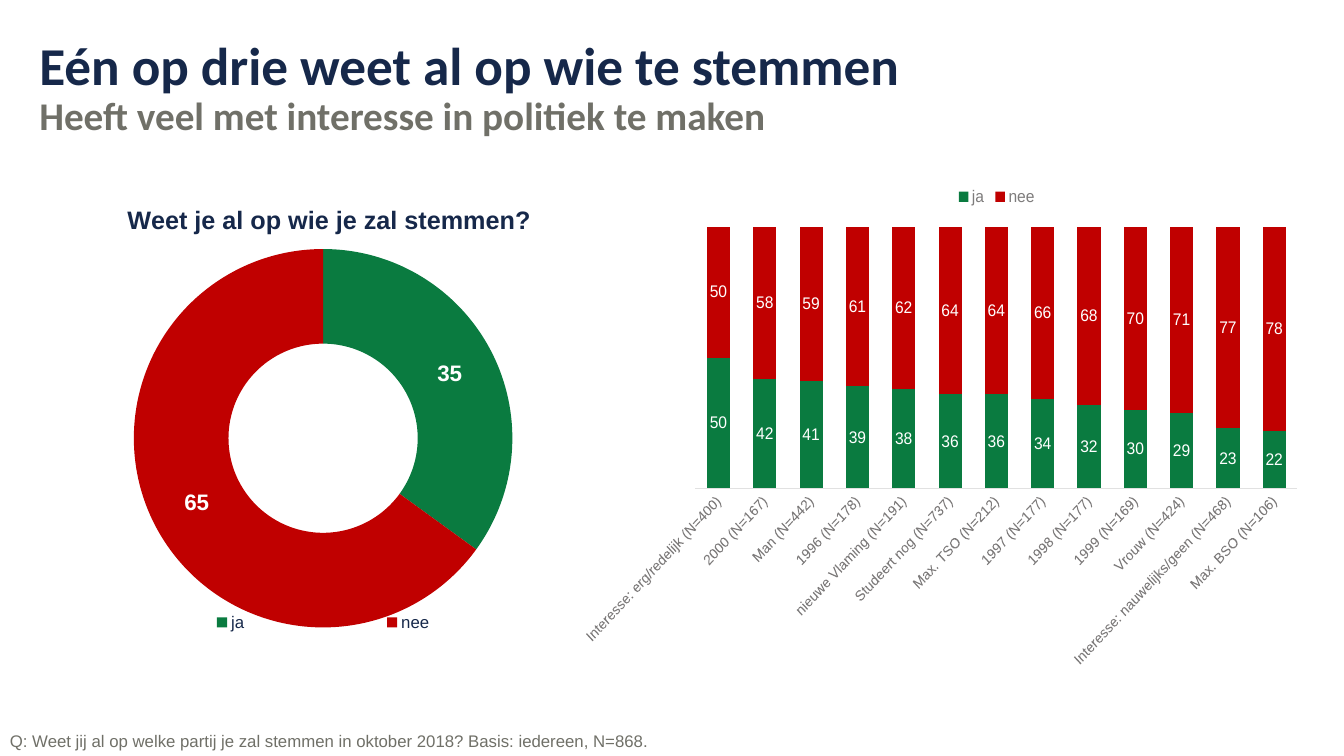
from lxml import etree
from pptx import Presentation
from pptx.chart.data import CategoryChartData
from pptx.dml.color import RGBColor
from pptx.enum.chart import XL_CHART_TYPE as CT, XL_LEGEND_POSITION as LP, XL_TICK_MARK as TM
from pptx.oxml.ns import qn
from pptx.util import Inches, Pt

NAVY = RGBColor(0x16, 0x28, 0x4A)
GREY = RGBColor(0x70, 0x70, 0x68)
MID_GREY = RGBColor(0x7E, 0x7C, 0x7C)
DARK = RGBColor(0x37, 0x36, 0x36)
LINE = RGBColor(0xE1, 0xE1, 0xE1)
WHITE = RGBColor(0xFF, 0xFF, 0xFF)
GREEN = RGBColor(0x0A, 0x7B, 0x40)
RED = RGBColor(0xC0, 0x00, 0x00)

GROUPS = [
    ("Interesse: erg/redelijk (N=400)", 50), ("2000 (N=167)", 42), ("Man (N=442)", 41),
    ("1996 (N=178)", 39), ("nieuwe Vlaming (N=191)", 38), ("Studeert nog (N=737)", 36),
    ("Max. TSO (N=212)", 36), ("1997 (N=177)", 34), ("1998 (N=177)", 32),
    ("1999 (N=169)", 30), ("Vrouw (N=424)", 29),
    ("Interesse: nauwelijks/geen (N=468)", 23), ("Max. BSO (N=106)", 22),
]


def set_font(font, size, color, bold=False, name="Arial"):
    font.name, font.size, font.bold = name, Pt(size), bold
    font.color.rgb = color


def add_run(p, text, **fmt):
    r = p.add_run()
    r.text = text
    set_font(r.font, **fmt)


def add_box(slide, box, inset=None):
    tf = slide.shapes.add_textbox(*map(Inches, box)).text_frame
    tf.word_wrap = True
    if inset is not None:
        tf.margin_left = tf.margin_right = tf.margin_top = tf.margin_bottom = inset
    return tf.paragraphs[0]


def set_layout(parent, index, inner=False, **shares):
    for old in parent.findall(qn("c:layout")):
        parent.remove(old)
    layout = etree.Element(qn("c:layout"))
    manual = etree.SubElement(layout, qn("c:manualLayout"))
    if inner:
        etree.SubElement(manual, qn("c:layoutTarget")).set("val", "inner")
    for key in ("x", "y"):
        etree.SubElement(manual, qn(f"c:{key}Mode")).set("val", "edge")
    for key, share in shares.items():
        etree.SubElement(manual, qn(f"c:{key}")).set("val", str(share))
    parent.insert(index, layout)


def add_chart(slide, box, kind, cats, series, plot, legend, legend_pos, legend_color, label):
    data = CategoryChartData(number_format="#,##0")
    data.categories = cats
    for name, values in series:
        data.add_series(name, values)
    chart = slide.shapes.add_chart(kind, *map(Inches, box), data).chart
    set_font(chart.font, 10, DARK)
    chart.has_title = False
    chart.has_legend = True
    chart.legend.position = legend_pos
    chart.legend.include_in_layout = False
    set_font(chart.legend.font, 12, legend_color)
    set_layout(chart.legend._element, 1, **legend)
    set_layout(chart.plots[0]._element.getparent(), 0, inner=True, **plot)
    for s in chart.plots[0].series:
        s.data_labels.show_value = True
        set_font(s.data_labels.font, color=WHITE, **label)
    return chart


def add_heading(slide, box):
    p = add_box(slide, box, inset=0)
    p.line_spacing = 0.9
    add_run(p, "Eén op drie weet al op wie te stemmen", size=38, color=NAVY, bold=True, name="Calibri")
    p.add_line_break()
    add_run(p, "Heeft veel met interesse in politiek te maken", size=28, color=GREY, bold=True, name="Calibri")


def add_doughnut(slide, box):
    chart = add_chart(
        slide, box, CT.DOUGHNUT, ["ja", "nee"], [("Series 1", [35, 65])],
        plot=dict(x=0.15, y=0.15, w=0.7, h=0.76), legend=dict(x=0.05, y=0.86, w=0.9, h=0.08),
        legend_pos=LP.BOTTOM, legend_color=NAVY, label=dict(size=16, bold=True))
    plot = chart.plots[0]
    plot.vary_by_categories = True
    for i, color in enumerate((GREEN, RED)):
        fill = plot.series[0].points[i].format.fill
        fill.solid()
        fill.fore_color.rgb = color
    chart.has_title = True
    title = chart.chart_title
    add_run(title.text_frame.paragraphs[0], "Weet je al op wie je zal stemmen?",
            size=18, color=NAVY, bold=True)
    set_layout(title._element, 1, x=0.13, y=0.05)


def add_columns(slide, box):
    yes = [share for _, share in GROUPS]
    chart = add_chart(
        slide, box, CT.COLUMN_STACKED_100, [name for name, _ in GROUPS],
        [("ja", yes), ("nee", [100 - share for share in yes])],
        plot=dict(x=0.09, y=0.105, w=0.889, h=0.526), legend=dict(x=0.47, y=0.02, w=0.13, h=0.05),
        legend_pos=LP.TOP, legend_color=MID_GREY, label=dict(size=12))
    plot = chart.plots[0]
    plot.vary_by_categories = False
    plot.gap_width = plot.overlap = 100
    for s, color in zip(plot.series, (GREEN, RED)):
        s.format.fill.solid()
        s.format.fill.fore_color.rgb = color
    chart.value_axis.visible = False
    chart.value_axis.has_major_gridlines = False
    axis = chart.category_axis
    axis.major_tick_mark = axis.minor_tick_mark = TM.NONE
    axis.format.line.color.rgb = LINE
    axis.format.line.width = Pt(0.75)
    set_font(axis.tick_labels.font, 10.5, MID_GREY)
    axis._element.find(qn("c:txPr")).find(qn("a:bodyPr")).set("rot", "-2700000")


def add_footnote(slide, box):
    add_run(add_box(slide, box),
            "Q: Weet jij al op welke partij je zal stemmen in oktober 2018? Basis: iedereen, N=868.",
            size=12, color=GREY)


def main():
    prs = Presentation()
    prs.slide_width, prs.slide_height = Inches(13.33), Inches(7.5)
    slide = prs.slides.add_slide(prs.slide_layouts[6])
    add_heading(slide, (0.39, 0.39, 11.93, 1))
    add_doughnut(slide, (0.52, 1.73, 5.37, 4.94))
    add_footnote(slide, (0, 7.2, 13.33, 0.3))
    add_columns(slide, (5.78, 1.73, 7.23, 4.94))
    prs.save("out.pptx")


if __name__ == "__main__":
    main()
